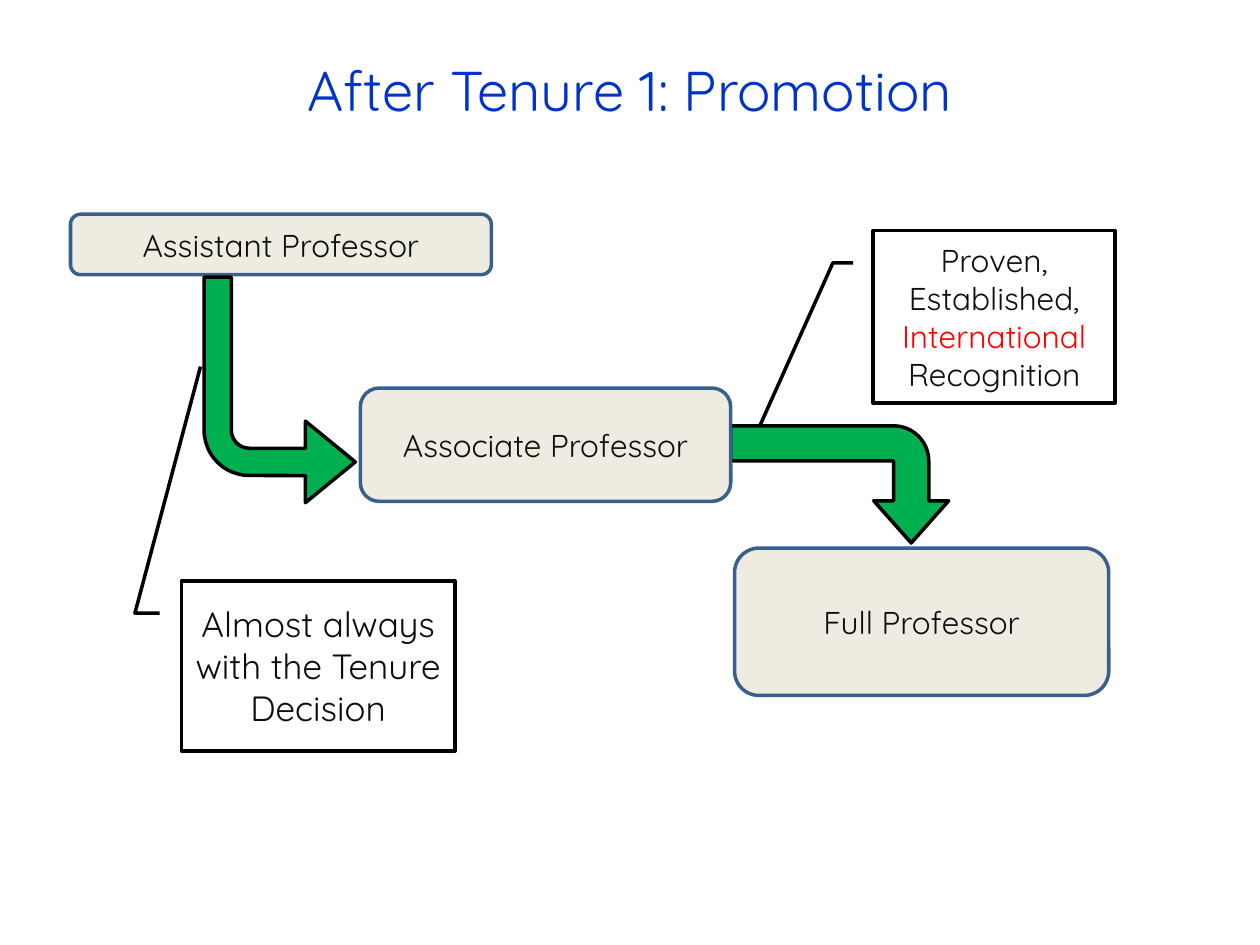
import pptx
import pptx.util
import pptx.dml.color
import pptx.enum.shapes
import pptx.enum.text

RGBColor = pptx.dml.color.RGBColor
SHAPE = pptx.enum.shapes.MSO_SHAPE
TITLE_BLUE = RGBColor(0x00, 0x33, 0xCC)
BEIGE = RGBColor(0xEE, 0xEC, 0xE1)
EDGE_BLUE = RGBColor(0x3A, 0x5F, 0x8C)
GREEN = RGBColor(0x00, 0xB0, 0x50)
BLACK = RGBColor(0x00, 0x00, 0x00)
INK = RGBColor(0x0D, 0x0D, 0x0D)
RED = RGBColor(0xFF, 0x00, 0x00)

FONT = "Quicksand"
WIDTH, HEIGHT = pptx.util.Inches(10), pptx.util.Inches(7.5)
COLS, ROWS = 100, 75


def grid(left, top, width, height):
    """Turn columns and rows of the slide grid into lengths."""
    col, row = WIDTH / COLS, HEIGHT / ROWS
    return [round(n) for n in (left * col, top * row, width * col, height * row)]


def write(sp, text, size=18, color=INK, highlight=None, highlight_color=RED):
    """Set centred text, with one optional phrase in another colour."""
    tf = sp.text_frame
    tf.word_wrap = True
    tf.vertical_anchor = pptx.enum.text.MSO_ANCHOR.MIDDLE
    p = tf.paragraphs[0]
    p.alignment = pptx.enum.text.PP_ALIGN.CENTER
    parts = text.partition(highlight) if highlight else (text,)
    for part in parts:
        r = p.add_run()
        r.text = part
        r.font.name = FONT
        r.font.size = pptx.util.Pt(size)
        r.font.color.rgb = highlight_color if part == highlight else color


def add_shape(s, kind, cell, fill=None, line=BLACK, adjustments=()):
    sp = s.shapes.add_shape(kind, *grid(*cell))
    sp.shadow.inherit = False
    if fill is None:
        sp.fill.background()
    else:
        sp.fill.solid()
        sp.fill.fore_color.rgb = fill
    sp.line.color.rgb = line
    sp.line.width = pptx.util.Pt(2)
    for i, value in enumerate(adjustments):
        sp.adjustments[i] = value
    return sp


def add_rank(s, text, cell):
    sp = add_shape(s, SHAPE.ROUNDED_RECTANGLE, cell, BEIGE, EDGE_BLUE)
    write(sp, text)


def add_bent_arrow(s, cell, adjustments, flips, rotation=0):
    sp = add_shape(s, SHAPE.BENT_ARROW, cell, GREEN, adjustments=adjustments)
    sp.rotation = rotation
    for flip in flips:
        sp._element.spPr.xfrm.set(flip, "1")


def add_callout(s, text, cell, adjustments=(), **text_format):
    sp = add_shape(s, SHAPE.LINE_CALLOUT_2, cell, adjustments=adjustments)
    write(sp, text, **text_format)


def add_title(s, text, cell):
    title = s.shapes.title
    title.left, title.top, title.width, title.height = grid(*cell)
    write(title, text, size=32, color=TITLE_BLUE)


def main():
    prs = pptx.Presentation()
    prs.slide_width, prs.slide_height = WIDTH, HEIGHT
    s = prs.slides.add_slide(prs.slide_layouts[5])

    add_title(s, "After Tenure 1: Promotion", (5, 3, 90, 8.2))
    add_rank(s, "Assistant Professor", (5.6, 17, 33.4, 4.8))
    add_bent_arrow(s, (16.2, 22, 12, 17.9), (0.18, 0.27, 0.33, 0.3), ["flipV"])
    add_bent_arrow(s, (62, 29.8, 9.3, 17.3), (0.3, 0.32, 0.36, 0.3),
                   ["flipH", "flipV"], rotation=270)
    add_rank(s, "Full Professor", (58.3, 43.5, 29.7, 11.7))
    add_rank(s, "Associate Professor", (28.6, 30.8, 29.4, 9))
    add_callout(s, "Almost always with the Tenure Decision", (14.4, 46.1, 21.7, 13.5),
                (0.19, -0.08, 0.19, -0.17, -1.26, 0.07), size=20)
    add_callout(s, "Proven, Established, International Recognition",
                (69.3, 18.3, 19.2, 13.7), highlight="International ")

    prs.save("out.pptx")


if __name__ == "__main__":
    main()
